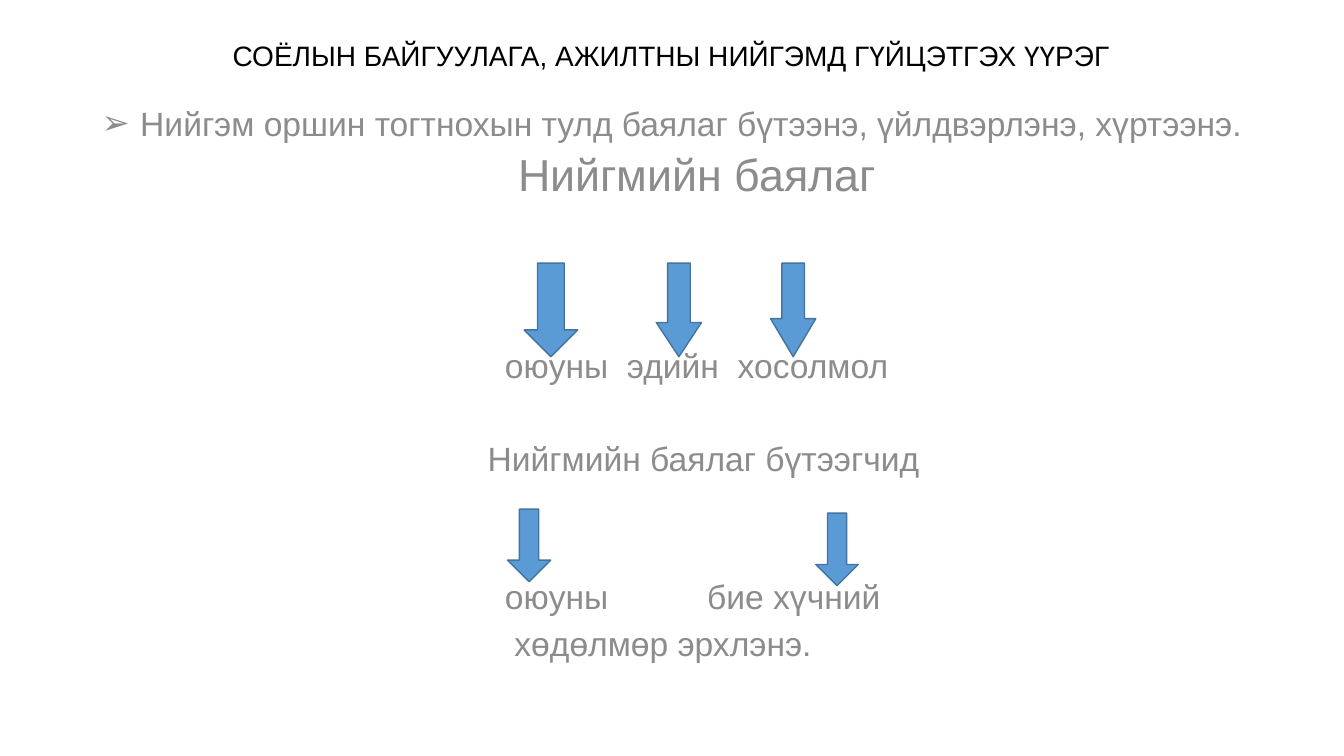
import pptx
import pptx.util
import pptx.dml.color
import pptx.enum.shapes
import pptx.enum.text
import pptx.oxml.ns
import lxml.etree

Cm = pptx.util.Cm
Pt = pptx.util.Pt
ALIGN = pptx.enum.text.PP_ALIGN

COLORS = {"heading": "000000", "body": "8C8C8C", "arrow": "5B9BD5", "arrow_edge": "43739E"}
FONT = "Arial"
LINE_PITCH = 33
GAP = 10
HANG = 0.97
LABEL_LEFT = 10.16

HEADING = "СОЁЛЫН БАЙГУУЛАГА, АЖИЛТНЫ НИЙГЭМД ГҮЙЦЭТГЭХ ҮҮРЭГ"
HEADING_BOX = (2.31, 0.76, 29.21, 1.19)
BODY_BOX = (2.31, 2.67, 30.84, 15.37)

# labels, points added to the space between them, size, alignment,
# lines left free above, left margin in cm, bullet
BODY_LINES = [
    (["Нийгэм оршин тогтнохын тулд баялаг бүтээнэ, үйлдвэрлэнэ, хүртээнэ."],
     0, 24, ALIGN.LEFT, 0, HANG, "➢"),
    (["Нийгмийн баялаг "], 0, 32, ALIGN.CENTER, 0, 0, None),
    (["оюуны", "эдийн", "хосолмол"], 6.67, 24, ALIGN.LEFT, 3, LABEL_LEFT, None),
    (["Нийгмийн баялаг бүтээгчид"], 0, 24, ALIGN.CENTER, 1, 0, None),
    (["оюуны", "бие хүчний"], 64, 24, ALIGN.LEFT, 2, LABEL_LEFT, None),
    (["хөдөлмөр эрхлэнэ."], 0, 24, ALIGN.LEFT, 0, LABEL_LEFT + 0.24, None),
]

# left, top, width, height within the body box, then shaft and head proportions
WEALTH_ARROWS = [
    (10.9, 3.96, 1.35, 2.36, 0.5, 0.5),
    (14.23, 3.96, 1.14, 2.36, 0.5, 0.756),
    (17.11, 3.96, 1.14, 2.36, 0.5, 0.842),
]
LABOUR_ARROWS = [
    (10.48, 10.16, 1.09, 1.83, 0.449, 0.5),
    (18.25, 10.26, 1.07, 1.83, 0.449, 0.5),
]


def rgb(role):
    return pptx.dml.color.RGBColor.from_string(COLORS[role])


def apply(target, values):
    for key, value in values.items():
        setattr(target, key, value)


def place(shape, box):
    apply(shape, dict(zip(("left", "top", "width", "height"), map(Cm, box))))


def add_text(paragraph, text, size, role):
    run = paragraph.add_run()
    run.text = text
    apply(run.font, {"size": Pt(size), "name": FONT, "bold": False})
    run.font.color.rgb = rgb(role)
    return run


def add_labels(paragraph, labels, widening, size):
    """Set the labels on one line, parted by single spaces widened in points."""
    for index, label in enumerate(labels):
        if index:
            space = add_text(paragraph, " ", size, "body")
            space._r.get_or_add_rPr().set("spc", str(round(widening * 100)))
        add_text(paragraph, label, size, "body")


def set_margin_and_bullet(paragraph, margin, bullet):
    qn = pptx.oxml.ns.qn
    properties = paragraph._p.get_or_add_pPr()
    properties.set("marL", str(Cm(margin)))
    properties.set("indent", str(-Cm(HANG) if bullet else 0))
    if bullet:
        lxml.etree.SubElement(properties, qn("a:buFont"), typeface=FONT)
        lxml.etree.SubElement(properties, qn("a:buChar"), char=bullet)
    else:
        lxml.etree.SubElement(properties, qn("a:buNone"))


def fill_heading(title, box):
    place(title, box)
    apply(title.text_frame, {
        "word_wrap": True,
        "auto_size": pptx.enum.text.MSO_AUTO_SIZE.NONE,
        "vertical_anchor": pptx.enum.text.MSO_ANCHOR.BOTTOM,
    })
    paragraph = title.text_frame.paragraphs[0]
    apply(paragraph, {"alignment": ALIGN.CENTER, "line_spacing": 0.9})
    add_text(paragraph, HEADING, 20, "heading")


def fill_body(body, box):
    place(body, box)
    frame = body.text_frame
    apply(frame, {
        "word_wrap": True,
        "auto_size": pptx.enum.text.MSO_AUTO_SIZE.NONE,
        "vertical_anchor": pptx.enum.text.MSO_ANCHOR.TOP,
    })
    for index, line in enumerate(BODY_LINES):
        labels, widening, size, alignment, free, margin, bullet = line
        paragraph = frame.add_paragraph() if index else frame.paragraphs[0]
        apply(paragraph, {
            "alignment": alignment,
            "line_spacing": 0.8,
            "space_before": Pt(GAP + free * LINE_PITCH),
            "space_after": Pt(0),
        })
        set_margin_and_bullet(paragraph, margin, bullet)
        add_labels(paragraph, labels, widening, size)


def add_arrows(slide, box, arrows):
    for left, top, width, height, shaft, head in arrows:
        arrow = slide.shapes.add_shape(
            pptx.enum.shapes.MSO_SHAPE.DOWN_ARROW,
            Cm(box[0] + left), Cm(box[1] + top), Cm(width), Cm(height))
        arrow.adjustments[0] = shaft
        arrow.adjustments[1] = head
        arrow.shadow.inherit = False
        arrow.fill.solid()
        arrow.fill.fore_color.rgb = rgb("arrow")
        arrow.line.color.rgb = rgb("arrow_edge")
        arrow.line.width = Pt(1)


def main():
    deck = pptx.Presentation()
    apply(deck, {"slide_width": Cm(33.87), "slide_height": Cm(19.05)})
    slide = deck.slides.add_slide(deck.slide_layouts[1])
    fill_heading(slide.shapes.title, HEADING_BOX)
    fill_body(slide.placeholders[1], BODY_BOX)
    for arrows in (WEALTH_ARROWS, LABOUR_ARROWS):
        add_arrows(slide, BODY_BOX, arrows)
    deck.save("out.pptx")


if __name__ == "__main__":
    main()
